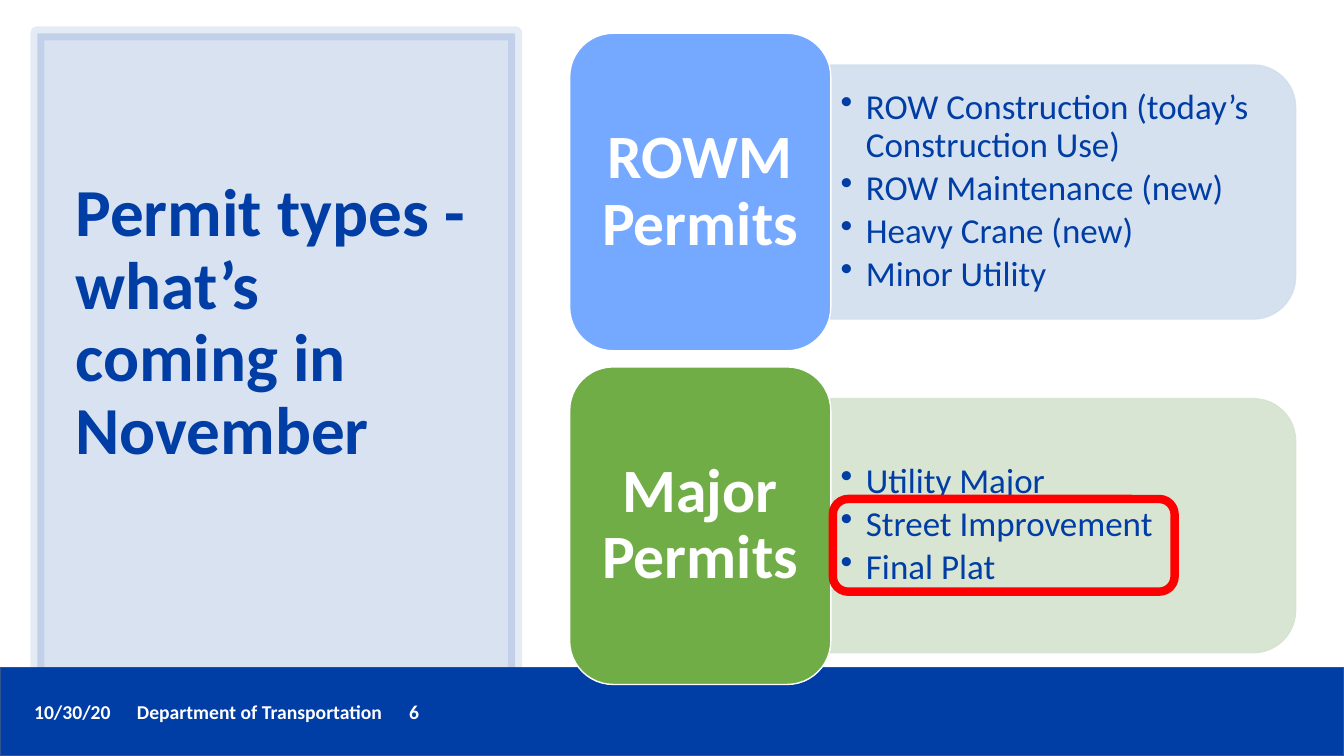
"""Build the slide on the permit types coming in November."""
from lxml import etree
from pptx import Presentation
from pptx import util as u
from pptx.dml.color import RGBColor
from pptx.enum import shapes, text
from pptx.oxml.ns import qn

NAVY = RGBColor(0x00, 0x3D, 0xA5)
EDGE = RGBColor(0x31, 0x53, 0x8F)
SKY = RGBColor(0x75, 0xA8, 0xFF)
PALE = RGBColor(0xD2, 0xDE, 0xEF)
GREEN = RGBColor(0x70, 0xAD, 0x47)
MINT = RGBColor(0xD5, 0xE3, 0xCF)
RED = RGBColor(0xFF, 0x00, 0x00)
WHITE = RGBColor(0xFF, 0xFF, 0xFF)

TITLE = "Permit types - what’s coming in November"
FOOTER = ["10/30/20", "Department of Transportation", "6"]
TABS = [1.02, 3.72]
GROUPS = [
    ("ROWM Permits", SKY, PALE,
     ["ROW Construction (today’s Construction Use)",
      "ROW Maintenance (new)", "Heavy Crane (new)", "Minor Utility"]),
    ("Major Permits", GREEN, MINT,
     ["Utility Major", "Street Improvement", "Final Plat"]),
]
LEFT, TOP, PITCH = 5.65, 0.33, 3.31
LABEL_W, LABEL_H = 2.59, 3.15
LIST_W, LIST_H = 4.61, 2.52
TEXT_W, TEXT_H = 4.49, 2.27

deck = Presentation()
deck.slide_width, deck.slide_height = u.Inches(13.33), u.Inches(7.5)
slide = deck.slides.add_slide(deck.slide_layouts[6])


def fade(color, alpha):
    node = color._xFill.find(qn("a:srgbClr"))
    etree.SubElement(node, qn("a:alpha"), val=str(alpha * 1000))


def draw(kind, box, fill, line, width, clear=(100, 100)):
    shape = slide.shapes.add_shape(kind, *map(u.Inches, box))
    shape.shadow.inherit = False
    if fill is None:
        shape.fill.background()
    else:
        shape.fill.solid()
        shape.fill.fore_color.rgb = fill
    shape.line.color.rgb = line
    shape.line.width = u.Pt(width)
    for paint, alpha in zip((shape.fill, shape.line.fill), clear):
        if alpha < 100:
            fade(paint.fore_color, alpha)
    return shape


def write(shape, lines, size, color, bold=False, bullet=False,
          align=text.PP_ALIGN.LEFT, space=0.9, tabs=()):
    frame = shape.text_frame
    frame.word_wrap = True
    frame.vertical_anchor = text.MSO_ANCHOR.MIDDLE
    for i, line in enumerate(lines):
        para = frame.paragraphs[0] if i == 0 else frame.add_paragraph()
        para.text = line
        para.alignment = align
        para.line_spacing = space
        props = para._p.get_or_add_pPr()
        if bullet:
            para.space_after = u.Pt(3.75)
            props.set("marL", str(u.Inches(0.25)))
            props.set("indent", str(-u.Inches(0.25)))
            etree.SubElement(props, qn("a:buChar"), char="•")
        if tabs:
            stops = etree.SubElement(props, qn("a:tabLst"))
            for stop in tabs:
                etree.SubElement(stops, qn("a:tab"), pos=str(u.Inches(stop)), algn="l")
        font = para.font
        font.name, font.size, font.bold = "Calibri", u.Pt(size), bold
        font.color.rgb = color


def add_text(box, lines, size, color, **style):
    write(slide.shapes.add_textbox(*map(u.Inches, box)), lines, size, color, **style)


kinds = shapes.MSO_SHAPE
draw(kinds.RECTANGLE, (0, 6.62, 13.33, 0.88), NAVY, EDGE, 1)
add_text((0.24, 6.89, 10.06, 0.34), ["\t".join(FOOTER)], 14, WHITE,
         bold=True, space=1.0, tabs=TABS)
draw(kinds.RECTANGLE, (0.37, 0.33, 4.74, 6.45), NAVY, NAVY, 10, (15, 10))
add_text((0.65, 0.7, 4.1, 5.02), [TITLE], 48, NAVY, bold=True)

for row, (name, dark, light, items) in enumerate(GROUPS):
    top = TOP + row * PITCH
    mid = top + LABEL_H / 2
    right = LEFT + LABEL_W
    panel = draw(kinds.ROUND_2_SAME_RECTANGLE,
                 (right + (LIST_W - LIST_H) / 2, mid - LIST_W / 2, LIST_H, LIST_W),
                 light, light, 1, (90, 90))
    panel.rotation = 90
    add_text((right, mid - TEXT_H / 2, TEXT_W, TEXT_H), items, 25, NAVY, bullet=True)
    label = draw(kinds.ROUNDED_RECTANGLE, (LEFT, top, LABEL_W, LABEL_H), dark, WHITE, 1)
    frame = label.text_frame
    frame.margin_left = frame.margin_right = u.Inches(0.18)
    frame.margin_top = frame.margin_bottom = u.Inches(0.09)
    write(label, [name], 44, WHITE, bold=True, align=text.PP_ALIGN.CENTER)

draw(kinds.FLOWCHART_ALTERNATE_PROCESS, (8.26, 4.95, 3.39, 0.92), None, RED, 6)
deck.save("out.pptx")
